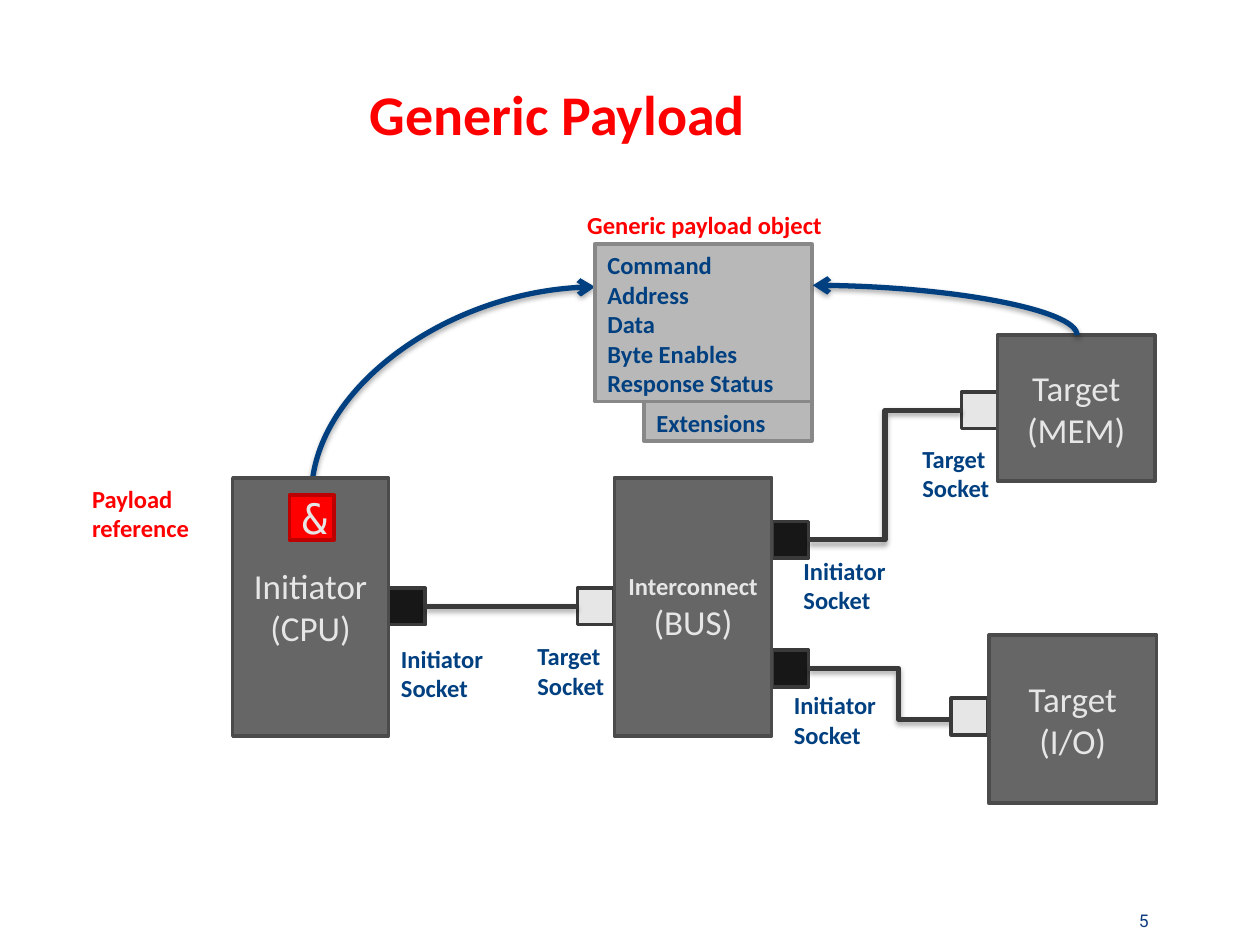
from lxml import etree
from pptx import Presentation
from pptx.dml.color import RGBColor
from pptx.enum.shapes import MSO_CONNECTOR, MSO_SHAPE
from pptx.enum.text import MSO_ANCHOR, MSO_AUTO_SIZE, PP_ALIGN
from pptx.oxml.ns import qn
from pptx.util import Pt

RECT, PROCESS = MSO_SHAPE.RECTANGLE, MSO_SHAPE.FLOWCHART_PROCESS
STRAIGHT, ELBOW, CURVE = MSO_CONNECTOR.STRAIGHT, MSO_CONNECTOR.ELBOW, MSO_CONNECTOR.CURVE
LEFT, CENTER, RIGHT = PP_ALIGN.LEFT, PP_ALIGN.CENTER, PP_ALIGN.RIGHT
TOP, MIDDLE = MSO_ANCHOR.TOP, MSO_ANCHOR.MIDDLE
FIT = MSO_AUTO_SIZE.SHAPE_TO_FIT_TEXT

RED = RGBColor(0xFF, 0x00, 0x00)
MAROON = RGBColor(0xBD, 0x00, 0x00)
BLUE = RGBColor(0x00, 0x40, 0x80)
NAVY = RGBColor(0x0F, 0x3D, 0x7F)
BLACK = RGBColor(0x17, 0x17, 0x17)
DARK = RGBColor(0x3A, 0x3A, 0x3A)
EDGE = RGBColor(0x4B, 0x4B, 0x4B)
GRAY = RGBColor(0x66, 0x66, 0x66)
RIM = RGBColor(0x88, 0x88, 0x88)
SILVER = RGBColor(0xB8, 0xB8, 0xB8)
PALE = RGBColor(0xE6, 0xE6, 0xE6)

FONT = "Calibri"
SIDE = 21  # socket width and height


def write(frame, lines, size, color, bold=False, align=LEFT, font=FONT):
    """Fill a text frame; a line is a string or a (string, size, bold) tuple."""
    frame.word_wrap = True
    for i, line in enumerate(lines):
        text, pts, heavy = (line, size, bold) if isinstance(line, str) else line
        para = frame.paragraphs[0] if i == 0 else frame.add_paragraph()
        para.alignment = align
        run = para.add_run()
        run.text = text
        run.font.name = font
        run.font.size = Pt(pts)
        run.font.bold = heavy
        run.font.color.rgb = color


def add_box(slide, at, fill, edge, kind=RECT, anchor=MIDDLE):
    box = slide.shapes.add_shape(kind, *map(Pt, at))
    box.shadow.inherit = False
    box.fill.solid()
    box.fill.fore_color.rgb = fill
    box.line.color.rgb = edge
    box.line.width = Pt(2)
    box.text_frame.vertical_anchor = anchor
    return box


def add_socket(slide, x, y, fill):
    return add_box(slide, (x, y, SIDE, SIDE), fill, DARK)


def add_block(slide, at, lines):
    block = add_box(slide, at, GRAY, EDGE)
    write(block.text_frame, lines, 20, PALE, align=CENTER)
    return block


def add_label(slide, at, lines, color=BLUE):
    label = slide.shapes.add_textbox(*map(Pt, at))
    write(label.text_frame, lines, 14, color, bold=True)
    label.text_frame.auto_size = FIT


def add_line(slide, kind, start, end, color=DARK):
    """Add a connector with a soft shadow below it."""
    line = slide.shapes.add_connector(kind, *map(Pt, start + end))
    line.line.color.rgb = color
    line.line.width = Pt(3)
    effects = etree.SubElement(line._element.spPr, qn("a:effectLst"))
    shadow = etree.SubElement(effects, qn("a:outerShdw"), blurRad="40000",
                              dist="23000", dir="5400000", rotWithShape="0")
    black = etree.SubElement(shadow, qn("a:srgbClr"), val="000000")
    etree.SubElement(black, qn("a:alpha"), val="35000")
    return line


def add_arc(slide, start, end):
    """Add an arrow that leaves vertically and arrives horizontally."""
    (x1, y1), (x2, y2) = start, end
    mx, my = (x1 + x2) / 2, (y1 + y2) / 2
    dx, dy = (x2 - x1) / 2, (y2 - y1) / 2
    # The frame is a quarter turn back, so that rotation puts the ends in place
    arc = add_line(slide, CURVE, (mx - dy, my + dx), (mx + dy, my - dx), BLUE)
    props = arc._element.spPr
    props.find(qn("a:xfrm")).set("rot", "5400000")
    props.find(qn("a:prstGeom")).set("prst", "curvedConnector2")
    etree.SubElement(props.find(qn("a:ln")), qn("a:tailEnd"), type="arrow")


def add_title(slide, text):
    title = slide.shapes.title
    title.left, title.top, title.width, title.height = map(Pt, (204, 37.5, 468, 54))
    title.text_frame.vertical_anchor = MIDDLE
    write(title.text_frame, [text], 32, RED, bold=True)


def add_number(slide, text):
    box = slide.shapes.add_textbox(*map(Pt, (513.5, 516.5, 150, 23.5)))
    write(box.text_frame, [text], 10, NAVY, align=RIGHT, font="Roboto")


def add_payload(slide):
    fields = ["Command", "Address", "Data", "Byte Enables", "Response Status"]
    parts = [((340, 139.5, 124, 90), PROCESS, fields),
             ((368, 229.5, 96, 22.5), RECT, ["Extensions"])]
    for at, kind, lines in parts:
        part = add_box(slide, at, SILVER, RIM, kind, TOP)
        write(part.text_frame, lines, 14, BLUE, bold=True)
    add_label(slide, (328.5, 116.5, 207.5, 24.5), ["Generic payload object"], RED)


def add_bus(slide):
    """Draw the blocks, their sockets and the links between them."""
    cpu_out, mem_out, io_out = [
        add_socket(slide, x, y, BLACK)
        for x, y in [(222, 336), (441, 298), (441, 371.5)]]
    io_link = add_line(slide, ELBOW, (462, 382), (565, 411))
    bus_in, mem_in, _ = [
        add_socket(slide, x, y, PALE)
        for x, y in [(330, 336), (549.5, 224), (543.5, 399)]]
    bus_link = add_line(slide, STRAIGHT, (243, 346.5), (330, 346.5))
    mem_link = add_line(slide, ELBOW, (462, 308.5), (549.5, 234.5))

    add_block(slide, (133, 273, 89, 147.5), ["Initiator", "(CPU)"])
    add_block(slide, (351, 273, 90, 147.5),
              [("Interconnect", 14, True), "(BUS)"])
    add_block(slide, (570, 191.5, 90, 83.5), ["Target", "(MEM)"])
    io_block = add_block(slide, (565, 363, 96, 96), ["Target", "(I/O)"])

    for link, start, end in [(bus_link, cpu_out, bus_in),
                             (mem_link, mem_out, mem_in),
                             (io_link, io_out, io_block)]:
        link.begin_connect(start, 3)
        link.end_connect(end, 1)

    for x, y, role in [(222, 364.5, "Initiator"), (300, 363, "Target"),
                       (452, 314, "Initiator"), (446.5, 391, "Initiator"),
                       (520, 250, "Target")]:
        add_label(slide, (x, y, 62, 41), [role, "Socket"])


def main():
    deck = Presentation()
    deck.slide_width, deck.slide_height = Pt(720), Pt(540)
    slide = deck.slides.add_slide(deck.slide_layouts[5])
    add_title(slide, "Generic Payload")
    add_arc(slide, (178, 283), (340, 164))
    add_bus(slide)
    add_payload(slide)
    add_arc(slide, (615.5, 191.5), (464.5, 163))
    mark = add_box(slide, (165.5, 283, 25.5, 25.5), RED, MAROON)
    write(mark.text_frame, ["&"], 24, PALE, align=CENTER, font="DejaVu Sans Mono")
    add_label(slide, (45.5, 273, 78.5, 41), ["Payload reference"], RED)
    add_number(slide, "5")
    deck.save("out.pptx")


if __name__ == "__main__":
    main()
